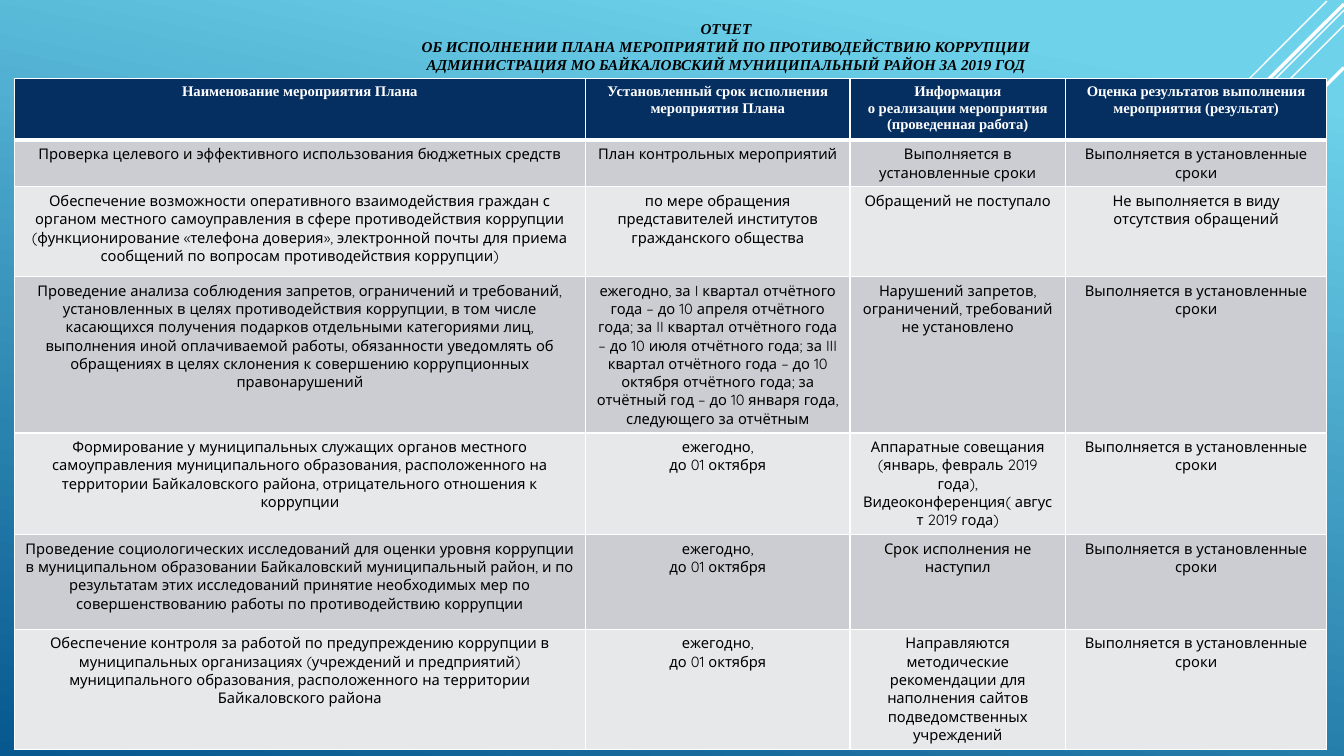
"""Builds a one-slide report on an anti-corruption action plan: a title over a table."""
import pptx
import pptx.dml.color
import pptx.enum.shapes
import pptx.enum.text
import pptx.oxml
import pptx.oxml.ns
import pptx.util

Inches, Pt = pptx.util.Inches, pptx.util.Pt
RGB = pptx.dml.color.RGBColor.from_string
CENTER = pptx.enum.text.PP_ALIGN.CENTER

THEME = {
    "sky": "6ED2EB", "deep": "06588E", "line": "FFFFFF",
    "header": "052F61", "bands": ("CCCDD2", "E7E8EA"),
    "title": {"name": "Times New Roman", "size": Pt(10.8), "bold": True, "italic": True, "color": "000000"},
    "head": {"name": "Times New Roman", "size": Pt(10.5), "bold": True, "color": "FFFFFF"},
    "body": {"name": "Quicksand", "size": Pt(10.5), "bold": False, "color": "000000"},
}


def format_text(tf, style):
    for p in tf.paragraphs:
        p.alignment = CENTER
        for r in p.runs:
            for key, value in style.items():
                if key == "color":
                    r.font.color.rgb = RGB(value)
                else:
                    setattr(r.font, key, value)


def set_borders(cell, widths):
    tcPr = cell._tc.get_or_add_tcPr()
    for i, (side, width) in enumerate(widths.items()):
        tcPr.insert(i, pptx.oxml.parse_xml(
            f'<a:{side} {pptx.oxml.ns.nsdecls("a")} w="{Pt(width)}"><a:solidFill>'
            f'<a:srgbClr val="{THEME["line"]}"/></a:solidFill></a:{side}>'))


prs = pptx.Presentation()
prs.slide_width, prs.slide_height = Inches(13.33), Inches(7.5)
s = prs.slides.add_slide(prs.slide_layouts[5])

fill = s.background.fill
fill.gradient()
fill.gradient_angle = 360 - 102
for stop, color, position in zip(fill.gradient_stops, (THEME["sky"], THEME["deep"]), (0.1, 1)):
    stop.color.rgb = RGB(color)
    stop.position = position

rays = [
    (13.16, 0.01, 9, 4.18, 1),
    (13.33, 0.1, 6.68, 6.75, 1),
    (13.33, 0.25, 7.91, 5.67, 1),
    (13.33, 0.04, 8.02, 5.34, 2.5),
    (13.33, 0.67, 8.58, 5.42, 2.5),
]
for *ends, width in rays:
    ray = s.shapes.add_connector(pptx.enum.shapes.MSO_CONNECTOR.STRAIGHT, *map(Inches, ends))
    ray.line.color.rgb = RGB(THEME["line"])
    ray.line.width = Pt(width)
    ray._element.spPr.append(pptx.oxml.parse_xml(f'<a:effectLst {pptx.oxml.ns.nsdecls("a")}/>'))

title = s.shapes.title
title.left, title.top, title.width, title.height = map(Inches, (2.73, 0.1, 8.94, 0.68))
tf = title.text_frame
tf.word_wrap = True
tf.vertical_anchor = pptx.enum.text.MSO_ANCHOR.BOTTOM
tf.paragraphs[0].text = (
    "ОТЧЕТ\nОБ ИСПОЛНЕНИИ ПЛАНА МЕРОПРИЯТИЙ ПО ПРОТИВОДЕЙСТВИЮ КОРРУПЦИИ\n"
    "АДМИНИСТРАЦИЯ МО БАЙКАЛОВСКИЙ МУНИЦИПАЛЬНЫЙ РАЙОН ЗА 2019 ГОД")
format_text(tf, THEME["title"])

on_time = "Выполняется в установленные сроки"
yearly = "ежегодно,\nдо 01 октября"
rows = [
    ("Наименование мероприятия Плана",
     "Установленный срок исполнения мероприятия Плана",
     "Информация\vо реализации мероприятия (проведенная работа)",
     "Оценка результатов выполнения мероприятия (результат)"),
    ("Проверка целевого и эффективного использования бюджетных средств",
     "План контрольных мероприятий", on_time, on_time),
    ("Обеспечение возможности оперативного взаимодействия граждан с органом местного "
     "самоуправления в сфере противодействия коррупции (функционирование «телефона доверия», "
     "электронной почты для приема сообщений по вопросам противодействия коррупции)",
     "по мере обращения представителей институтов гражданского общества",
     "Обращений не поступало",
     "Не выполняется в виду отсутствия обращений"),
    ("Проведение анализа соблюдения запретов, ограничений и требований, установленных в целях "
     "противодействия коррупции, в том числе касающихся получения подарков отдельными категориями "
     "лиц, выполнения иной оплачиваемой работы, обязанности уведомлять об обращениях в целях "
     "склонения к совершению коррупционных правонарушений",
     "ежегодно, за I квартал отчётного года – до 10 апреля отчётного года; за II квартал отчётного "
     "года – до 10 июля отчётного года; за III квартал отчётного года – до 10 октября отчётного "
     "года; за отчётный год – до 10 января года, следующего за отчётным",
     "Нарушений запретов, ограничений, требований не установлено", on_time),
    ("Формирование у муниципальных служащих органов местного самоуправления муниципального "
     "образования, расположенного на территории Байкаловского района, отрицательного отношения "
     "к коррупции",
     yearly,
     "Аппаратные совещания (январь, февраль 2019 года),\nВидеоконференция( август 2019 года)",
     on_time),
    ("Проведение социологических исследований для оценки уровня коррупции в муниципальном "
     "образовании Байкаловский муниципальный район, и по результатам этих исследований принятие "
     "необходимых мер по совершенствованию работы по противодействию коррупции",
     yearly, "Срок исполнения не наступил", on_time),
    ("Обеспечение контроля за работой по предупреждению коррупции в муниципальных организациях "
     "(учреждений и предприятий) муниципального образования, расположенного на территории "
     "Байкаловского района",
     yearly,
     "Направляются методические рекомендации для наполнения сайтов подведомственных учреждений",
     on_time),
]
col_widths = (5.67, 2.62, 2.14, 2.59)
row_heights = (0.61, 0.46, 0.89, 1.55, 1, 0.94, 1.19)

table = s.shapes.add_table(len(rows), len(col_widths), Inches(0.14), Inches(0.78),
                           Inches(sum(col_widths)), Inches(sum(row_heights))).table
for column, width in zip(table.columns, col_widths):
    column.width = Inches(width)
for i, (row, height, texts) in enumerate(zip(table.rows, row_heights, rows)):
    row.height = Inches(height)
    for cell, text in zip(row.cells, texts):
        cell.text_frame.text = text
        format_text(cell.text_frame, THEME["body" if i else "head"])
        cell.fill.solid()
        cell.fill.fore_color.rgb = RGB(THEME["bands"][(i - 1) % 2] if i else THEME["header"])
        set_borders(cell, {"lnL": 1, "lnR": 1, "lnT": 3 if i == 1 else 1, "lnB": 1 if i else 3})

prs.save("out.pptx")
